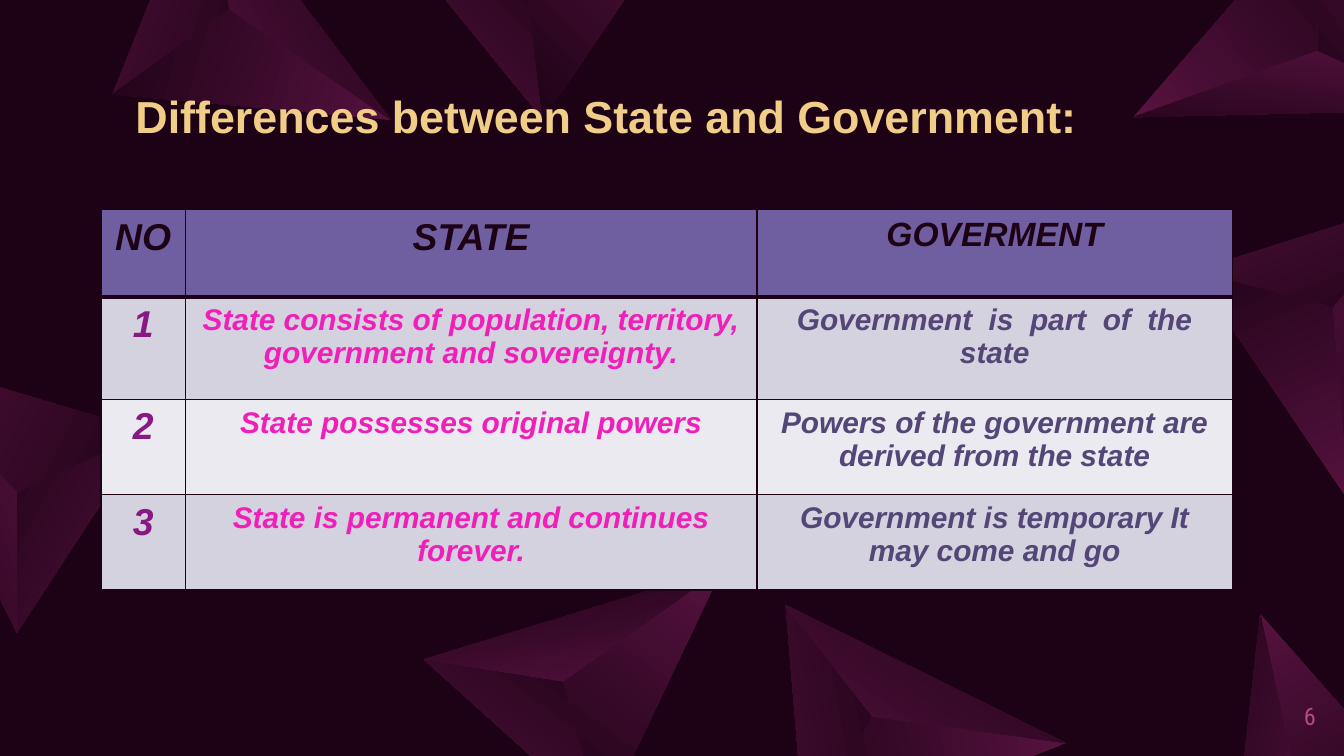
from math import cos, radians, sin

from lxml.etree import SubElement
from pptx import Presentation
from pptx.dml.color import RGBColor
from pptx.enum.text import MSO_ANCHOR, PP_ALIGN
from pptx.oxml.ns import qn
from pptx.util import Pt

NIGHT, PLUM, GOLD, ROSE = "1D0216", "591341", "F0CE88", "B64B7F"
HEADER, BAND, PALE = "705FA0", "D5D2DF", "EBEAF0"
NUMBER, PINK, VIOLET = "881882", "F01FB9", "544778"

# Crystal corners relative to its apex, and the facets between them
LEFT, BOTTOM, RIGHT, APEX = (-72, -23), (9.4, 77), (93.6, -46.8), (0, 0)
FACETS = {  # name: (corners, gradient angle)
    "left": ((LEFT, BOTTOM, APEX), 45),
    "right": ((BOTTOM, RIGHT, APEX), 225),
    "top": ((LEFT, APEX, RIGHT), 90),
}
ALL = ("left", "right", "top")
CRYSTALS = [  # apex x, apex y, rotation, facets on the page
    (697, 431.3, 284.5, ("right", "top")),
    (281.5, -13, 0, ("left", "right")),
    (705.6, 27.4, 186.8, ALL),
    (714.2, 164.9, 111.7, ALL),
    (301.7, 365, 351.2, ALL),
    (9, 263.5, 252.3, ALL),
    (123.1, 5, 61, ALL),
    (467.3, 383.8, 34.4, ALL),
]

COLUMNS = (45.4, 306, 255)
ROWS = (46.8, 54.9, 51, 51)
HEADINGS = (("NO", 20), ("STATE", 20), ("GOVERMENT", 18))
DIFFERENCES = [
    ("State consists of population, territory, government and sovereignty.",
     "Government  is  part  of  the state"),
    ("State possesses original powers",
     "Powers of the government are derived from the state"),
    ("State is permanent and continues forever.",
     "Government is temporary It may come and go"),
]


def color(value):
    return RGBColor.from_string(value)


def write(frame, text, size, fill, font="Arial", bold=False, italic=False,
          align=PP_ALIGN.LEFT):
    para = frame.paragraphs[0]
    para.alignment = align
    span = para.add_run()
    span.text = text
    span.font.name = font
    span.font.size = Pt(size)
    span.font.bold = bold
    span.font.italic = italic
    span.font.color.rgb = color(fill)


def add_crystal(page, apex_x, apex_y, rotation, facets):
    turn = radians(rotation)
    for name in facets:
        corners, angle = FACETS[name]
        xs, ys = zip(*corners)
        middle_x, middle_y = (min(xs) + max(xs)) / 2, (min(ys) + max(ys)) / 2
        # Each facet turns on its own middle, so carry that around the apex
        shift_x = apex_x + middle_x * cos(turn) - middle_y * sin(turn) - middle_x
        shift_y = apex_y + middle_x * sin(turn) + middle_y * cos(turn) - middle_y
        points = [(Pt(x + shift_x), Pt(y + shift_y)) for x, y in corners]
        builder = page.shapes.build_freeform(*points[0])
        builder.add_line_segments(points[1:], close=True)
        facet = builder.convert_to_shape()
        facet.rotation = rotation
        facet.shadow.inherit = False
        facet.line.fill.background()
        facet.fill.gradient()
        facet.fill.gradient_angle = angle
        for stop, shade in zip(facet.fill.gradient_stops, (PLUM, NIGHT)):
            stop.color.rgb = color(shade)


def add_title(page, left, top, width, height):
    box = page.shapes.add_textbox(Pt(left), Pt(top), Pt(width), Pt(height))
    box.text_frame.word_wrap = False
    write(box.text_frame, "Differences between State and Government:", 24, GOLD,
          bold=True)


def add_page_number(page, left, top, width, height):
    box = page.shapes.add_textbox(Pt(left), Pt(top), Pt(width), Pt(height))
    frame = box.text_frame
    frame.word_wrap = True
    frame.vertical_anchor = MSO_ANCHOR.MIDDLE
    frame.margin_left = frame.margin_right = 0
    frame.margin_top = frame.margin_bottom = 0
    write(frame, "6", 13, ROSE, font="Roboto Condensed", align=PP_ALIGN.RIGHT)


def set_borders(cell, **widths):
    properties = cell._tc.get_or_add_tcPr()
    for side in "LRTB":
        line = SubElement(properties, qn(f"a:ln{side}"),
                          w=str(Pt(widths.get(side, 1))))
        fill = SubElement(line, qn("a:solidFill"))
        SubElement(fill, qn("a:srgbClr"), val=NIGHT)


def add_comparison(page, left, top, width, height):
    grid = page.shapes.add_table(len(ROWS), len(COLUMNS), Pt(left), Pt(top),
                                 Pt(width), Pt(height)).table
    for column, size in zip(grid.columns, COLUMNS):
        column.width = Pt(size)
    for row, size in zip(grid.rows, ROWS):
        row.height = Pt(size)

    # Every row as (text, size, colour) entries
    content = [[(text, size, NIGHT) for text, size in HEADINGS]]
    for number, (state, government) in enumerate(DIFFERENCES, 1):
        content.append([(str(number), 20, NUMBER), (state, 16, PINK),
                        (government, 16, VIOLET)])

    # A thick rule separates the header from the body
    rules = {0: {"B": 3}, 1: {"T": 3}}
    for index, entries in enumerate(content):
        shade = HEADER if index == 0 else BAND if index % 2 else PALE
        for column, (text, size, ink) in enumerate(entries):
            cell = grid.cell(index, column)
            set_borders(cell, **rules.get(index, {}))
            cell.fill.solid()
            cell.fill.fore_color.rgb = color(shade)
            write(cell.text_frame, text, size, ink, bold=True, italic=True,
                  align=PP_ALIGN.CENTER)


def main():
    deck = Presentation()
    deck.slide_width, deck.slide_height = Pt(720), Pt(405)
    page = deck.slides.add_slide(deck.slide_layouts[6])
    page.background.fill.solid()
    page.background.fill.fore_color.rgb = color(NIGHT)

    for crystal in CRYSTALS:
        add_crystal(page, *crystal)
    add_page_number(page, 673.2, 368, 31.7, 31)
    add_comparison(page, 54, 112.3, sum(COLUMNS), sum(ROWS))
    add_title(page, 65.5, 44, 523.4, 36)
    deck.save("out.pptx")


if __name__ == "__main__":
    main()
